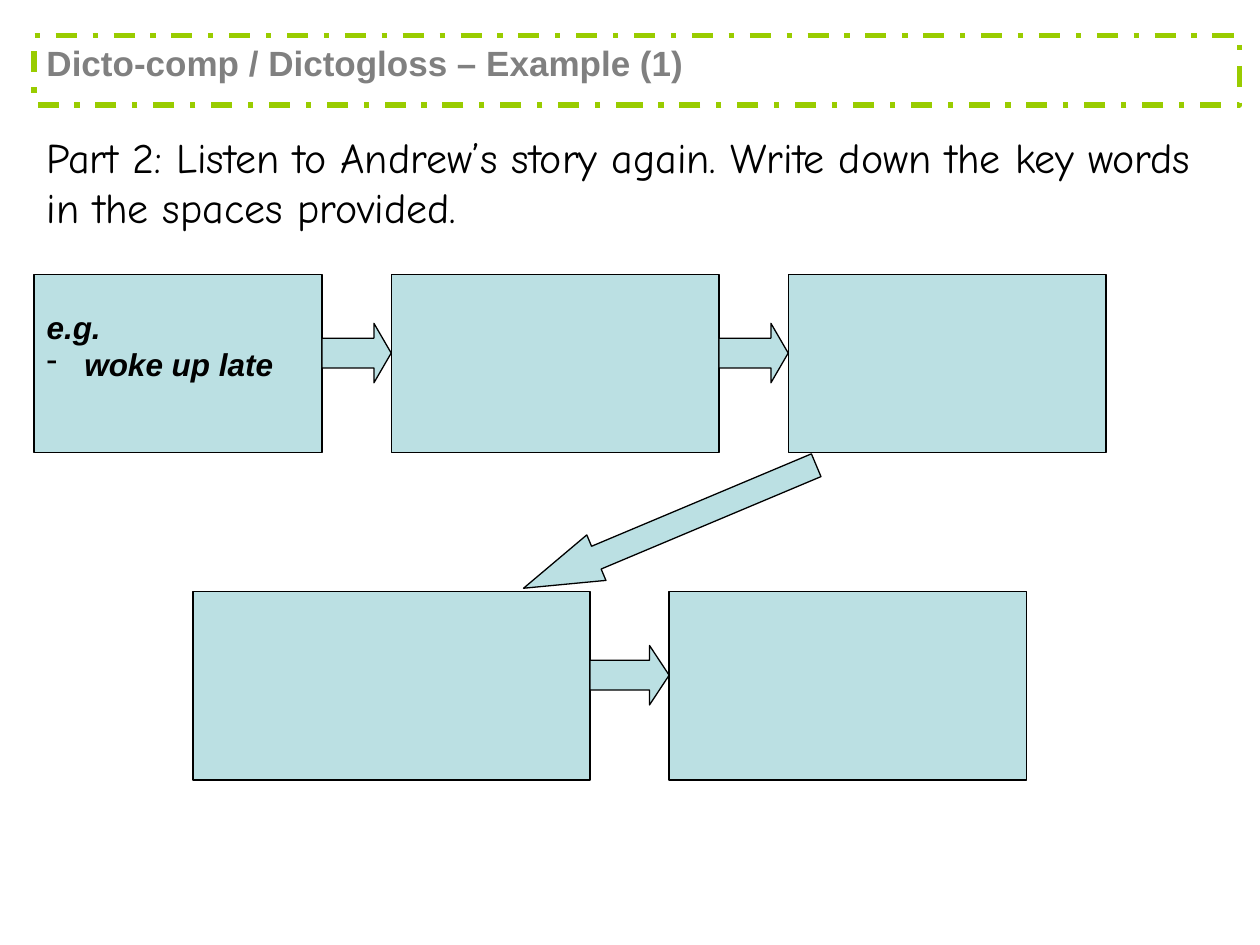
from lxml import etree
from pptx import Presentation
from pptx import util as u
from pptx.dml.color import RGBColor
from pptx.enum import dml, shapes, text
from pptx.oxml.ns import qn

Pt = u.Pt
Kind = shapes.MSO_SHAPE
PALE_BLUE, BLACK, GREY, LIME = "BBE0E3", "000000", "808080", "99CC00"


def colour(value):
    return RGBColor.from_string(value)


def add_span(para, words, size, font="Arial", ink=BLACK, bold=False, italic=False):
    para.alignment = text.PP_ALIGN.LEFT
    span = para.add_run()
    span.text = words
    span.font.name, span.font.size = font, Pt(size)
    span.font.bold, span.font.italic = bold, italic
    span.font.color.rgb = colour(ink)


def add_dash_bullet(para, indent):
    properties = para._p.get_or_add_pPr()
    properties.set("marL", str(Pt(indent)))
    properties.set("indent", str(-Pt(indent)))
    etree.SubElement(properties, qn("a:buFontTx"))
    etree.SubElement(properties, qn("a:buChar")).set("char", "-")


def add_figure(page, kind, box, fill=PALE_BLUE, line=BLACK, weight=0.75):
    figure = page.shapes.add_shape(kind, *map(Pt, box))
    figure.shadow.inherit = False
    if fill:
        figure.fill.solid()
        figure.fill.fore_color.rgb = colour(fill)
    else:
        figure.fill.background()
    figure.line.color.rgb = colour(line)
    figure.line.width = Pt(weight)
    return figure


def add_arrow(page, kind, box, head, rotation=0):
    """Head is the length of the arrowhead relative to the arrow's thickness."""
    arrow = add_figure(page, kind, box)
    arrow.adjustments[0], arrow.adjustments[1] = 0.5, head
    arrow.rotation = rotation


def add_title(page, box):
    banner = add_figure(page, Kind.RECTANGLE, box, fill=None, line=LIME, weight=3)
    banner.line.dash_style = dml.MSO_LINE.DASH_DOT
    frame = banner.text_frame
    frame.word_wrap = True
    frame.vertical_anchor = text.MSO_ANCHOR.TOP
    add_span(frame.paragraphs[0], "Dicto-comp / Dictogloss – Example (1)", 20,
             ink=GREY, bold=True)


def add_instruction(page, box):
    frame = page.shapes.add_textbox(*map(Pt, box)).text_frame
    frame.word_wrap = True
    frame.auto_size = text.MSO_AUTO_SIZE.SHAPE_TO_FIT_TEXT
    add_span(frame.paragraphs[0],
             "Part 2: Listen to Andrew’s story again. "
             "Write down the key words in the spaces provided.",
             24, font="Comic Neue")


def add_story_row(page, box, widths, head):
    """Spread boxes evenly over the row and join them with arrows."""
    left, top, width, height = box
    gap = (width - sum(widths)) / (len(widths) - 1)
    arrow_height = 34
    cells = []
    for index, cell_width in enumerate(widths):
        if index:
            arrow_top = top + (height - arrow_height) / 2 - 6
            add_arrow(page, Kind.RIGHT_ARROW,
                      (left - gap, arrow_top, gap, arrow_height), head)
        cells.append(add_figure(page, Kind.RECTANGLE, (left, top, cell_width, height)))
        left += cell_width + gap
    return cells


def add_example(cell):
    frame = cell.text_frame
    frame.word_wrap = True
    frame.vertical_anchor = text.MSO_ANCHOR.MIDDLE
    frame.margin_bottom = Pt(24.3)
    add_span(frame.paragraphs[0], "e.g.", 18, bold=True, italic=True)
    answer = frame.add_paragraph()
    add_dash_bullet(answer, 21.6)
    add_span(answer, "woke up late", 18, bold=True, italic=True)


def main():
    deck = Presentation()
    deck.slide_width, deck.slide_height = Pt(720), Pt(540)
    page = deck.slides.add_slide(deck.slide_layouts[6])

    add_instruction(page, (19.5, 71.5, 680.5, 65))
    add_title(page, (19.5, 20.2, 689, 39.8))
    first_row = add_story_row(page, (19.5, 156.7, 612.5, 102.1), (164.5, 187.3, 181.6), 0.29)
    add_story_row(page, (110.3, 338, 476.3, 107.7), (226.8, 204.2), 0.33)
    add_arrow(page, Kind.DOWN_ARROW, (368.7, 210.3, 28.2, 181.4), 1.6, rotation=67.2)
    add_example(first_row[0])

    deck.save("out.pptx")


if __name__ == "__main__":
    main()
